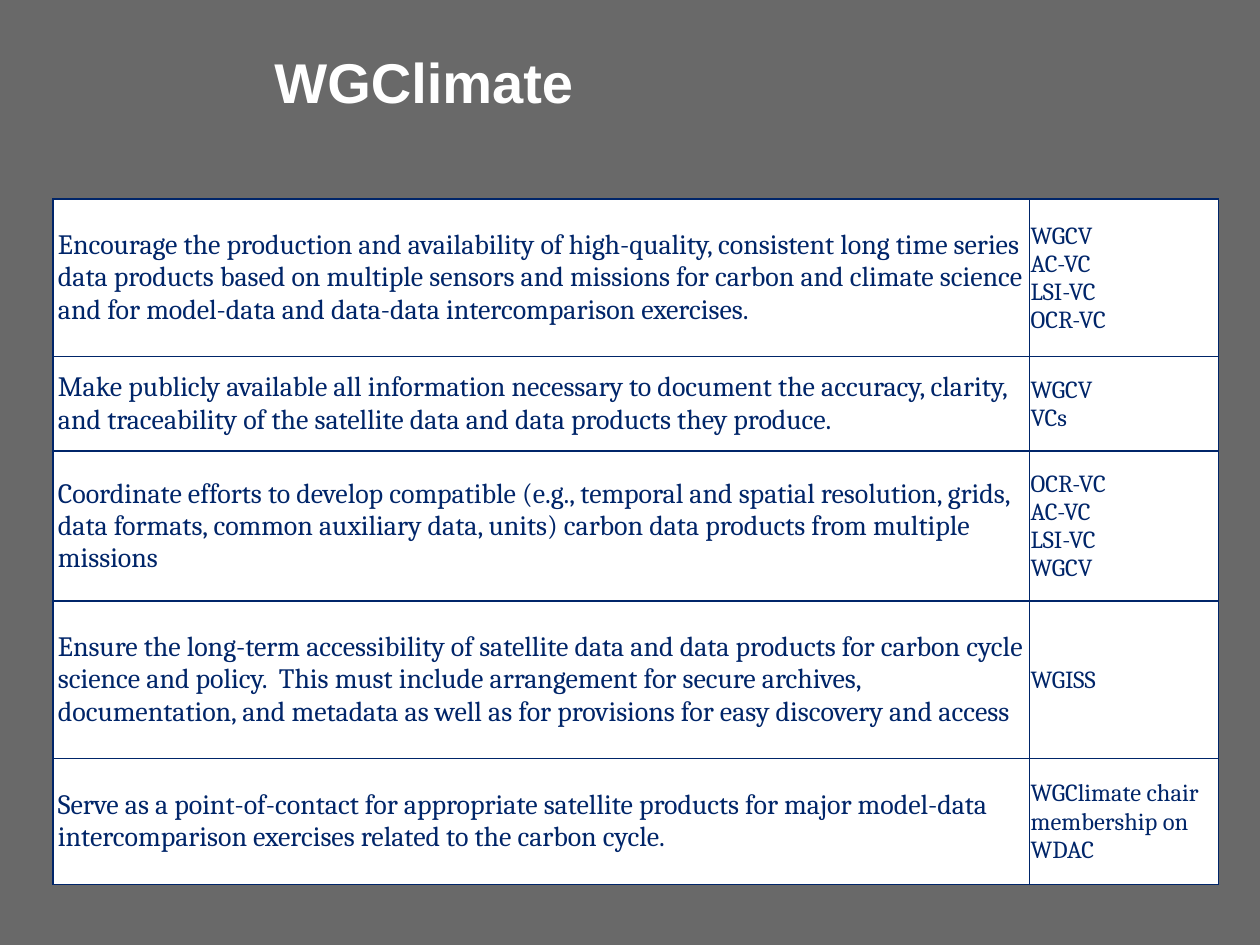
from dataclasses import dataclass

from lxml.etree import SubElement
from pptx import Presentation
from pptx.dml.color import RGBColor
from pptx.enum.text import MSO_ANCHOR
from pptx.oxml.ns import qn
from pptx.util import Pt

NAVY, WHITE, GREY = "002569", "FFFFFF", "696969"


@dataclass
class Task:
    height: float
    goal: str
    groups: list[str]


@dataclass
class Style:
    size: float
    inset: tuple[float, float, float, float]


GOAL = Style(16, (2.88, 2.88, 2.88, 2.88))
GROUP = Style(14, (0.72, 0.72, 0.72, 0))

TASKS = [
    Task(90, "Encourage the production and availability of high-quality, consistent "
         "long time series data products based on multiple sensors and missions for "
         "carbon and climate science and for model-data and data-data "
         "intercomparison exercises.",
         ["WGCV", "AC-VC", "LSI-VC", "OCR-VC"]),
    Task(54, "Make publicly available all information necessary to document the "
         "accuracy, clarity, and traceability of the satellite data and data "
         "products they produce.",
         ["WGCV", "VCs"]),
    Task(85.68, "Coordinate efforts to develop compatible (e.g., temporal and spatial "
         "resolution, grids, data formats, common auxiliary data, units) carbon data "
         "products from multiple missions",
         ["OCR-VC", "AC-VC", "LSI-VC", "WGCV"]),
    Task(90, "Ensure the long-term accessibility of satellite data and data products "
         "for carbon cycle science and policy.  This must include arrangement for "
         "secure archives, documentation, and metadata as well as for provisions for "
         "easy discovery and access",
         ["WGISS"]),
    Task(72, "Serve as a point-of-contact for appropriate satellite products for major "
         "model-data intercomparison exercises related to the carbon cycle.",
         ["WGClimate chair membership on WDAC"]),
]


def paint(fill, color: str) -> None:
    fill.solid()
    fill.fore_color.rgb = RGBColor.from_string(color)


def add_run(para, text: str, size: float, face: str, color: str,
            bold: bool = False) -> None:
    run = para.add_run()
    run.text = text
    run.font.size = Pt(size)
    run.font.name = face
    run.font.bold = bold
    run.font.color.rgb = RGBColor.from_string(color)


def add_edges(cell, color: str, width: float) -> None:
    props = cell._tc.get_or_add_tcPr()
    for side in ("lnL", "lnR", "lnT", "lnB"):
        line = SubElement(props, qn(f"a:{side}"), w=str(Pt(width)))
        fill = SubElement(line, qn("a:solidFill"))
        SubElement(fill, qn("a:srgbClr"), val=color)


def fill_cell(cell, lines: list[str], style: Style) -> None:
    (cell.margin_left, cell.margin_top,
     cell.margin_right, cell.margin_bottom) = map(Pt, style.inset)
    cell.vertical_anchor = MSO_ANCHOR.MIDDLE
    add_edges(cell, NAVY, 1)
    paint(cell.fill, WHITE)
    para = cell.text_frame.paragraphs[0]
    for i, line in enumerate(lines):
        if i:
            para.add_line_break()
        add_run(para, line, style.size, "Cambria", NAVY)


def add_tasks(slide, tasks: list[Task], widths: tuple[float, ...]) -> None:
    high = sum(task.height for task in tasks)
    table = slide.shapes.add_table(len(tasks), len(widths), Pt(30.24), Pt(113.76),
                                   Pt(sum(widths)), Pt(high)).table
    table.first_row = table.horz_banding = False
    for col, width in zip(table.columns, widths):
        col.width = Pt(width)
    for i, task in enumerate(tasks):
        table.rows[i].height = Pt(task.height)
        fill_cell(table.cell(i, 0), [task.goal], GOAL)
        fill_cell(table.cell(i, 1), task.groups, GROUP)


def add_title(slide, text: str) -> None:
    box = slide.shapes.add_textbox(Pt(149.76), Pt(23.76), Pt(437.76), Pt(82.8))
    box.text_frame.word_wrap = True
    add_run(box.text_frame.paragraphs[0], text, 32, "Arial", WHITE, bold=True)


def main() -> None:
    # Page
    deck = Presentation()
    deck.slide_width, deck.slide_height = Pt(720), Pt(540)
    slide = deck.slides.add_slide(deck.slide_layouts[6])
    paint(slide.background.fill, GREY)

    # Table of tasks and the groups in charge
    add_tasks(slide, TASKS, (558, 108))

    # Title
    add_title(slide, "WGClimate")

    deck.save("out.pptx")


if __name__ == "__main__":
    main()
